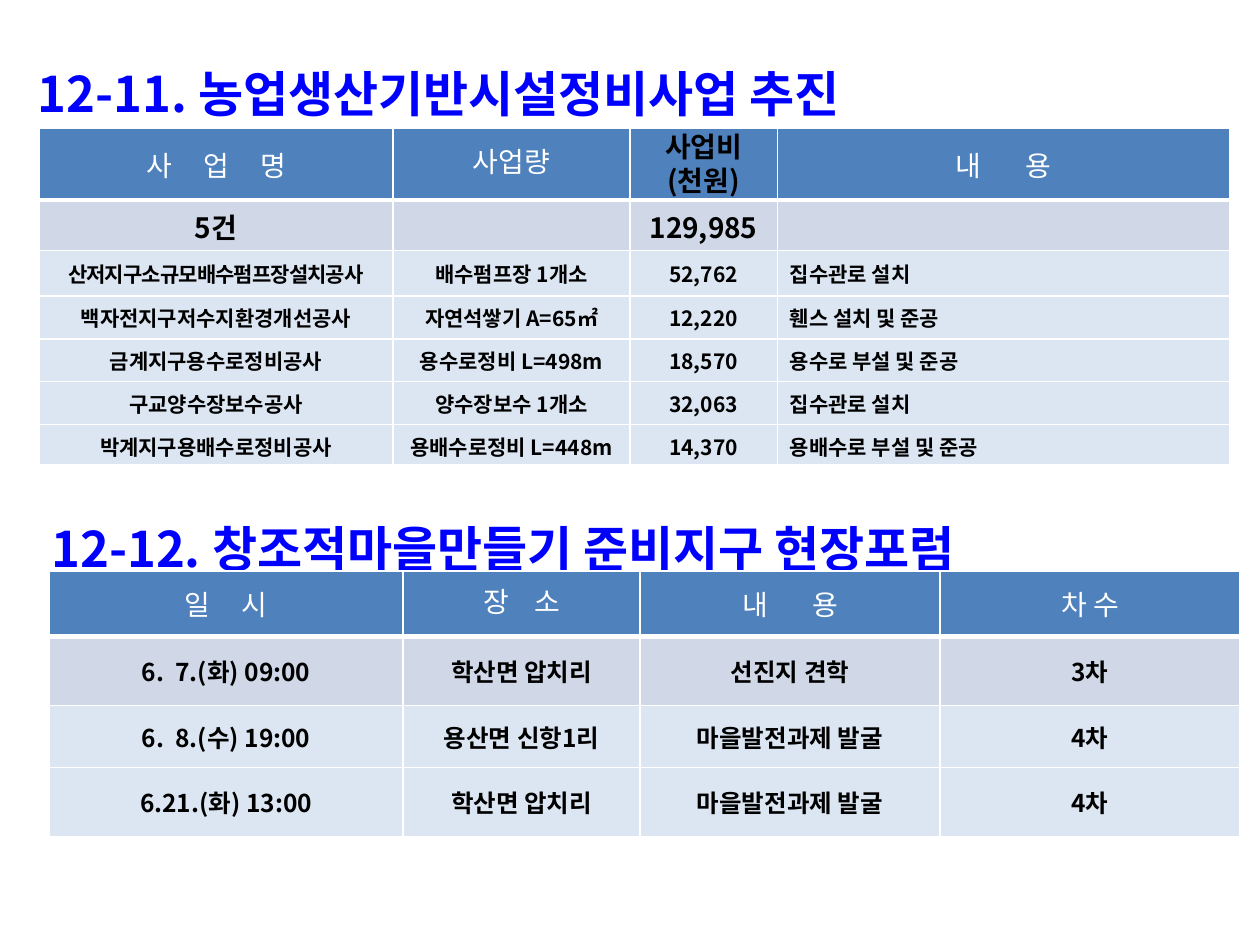
from lxml import etree
from pptx import Presentation
from pptx.dml.color import RGBColor
from pptx.enum.text import MSO_ANCHOR, PP_ALIGN
from pptx.oxml.ns import qn
from pptx.util import Pt

LEFT, CENTER = PP_ALIGN.LEFT, PP_ALIGN.CENTER
MIDDLE = MSO_ANCHOR.MIDDLE
FONT = "Noto Sans CJK KR"
TITLE_BLUE = RGBColor(0x00, 0x00, 0xFF)
HEADER_BLUE = RGBColor(0x4F, 0x81, 0xBD)
FIRST_ROW = RGBColor(0xD0, 0xD8, 0xE8)
BODY_ROW = RGBColor(0xDC, 0xE6, 0xF2)
WHITE = RGBColor(0xFF, 0xFF, 0xFF)
BLACK = RGBColor(0x00, 0x00, 0x00)


def style_span(span, size, color, bold, spacing=0):
    """Set Latin and East Asian font; spacing is letter spacing in points."""
    span.font.name = FONT
    span.font.size = Pt(size)
    span.font.bold = bold
    span.font.color.rgb = color
    props = span.font._element
    props.find(qn("a:latin")).addnext(
        etree.Element(qn("a:ea"), typeface=FONT))
    if spacing:
        props.set("spc", str(round(spacing * 100)))


def add_border(cell, side, width):
    line = etree.SubElement(cell._tc.get_or_add_tcPr(), qn("a:ln" + side),
                            w=str(Pt(width)))
    fill = etree.SubElement(line, qn("a:solidFill"))
    etree.SubElement(fill, qn("a:srgbClr"), val=str(WHITE))


deck = Presentation()
deck.slide_width, deck.slide_height = Pt(720), Pt(540)
page = deck.slides.add_slide(deck.slide_layouts[6])

projects = [
    ["사 업 명", "사업량", "사업비\n(천원)", "내 용"],
    ["5건", "", "129,985", ""],
    ["산저지구소규모배수펌프장설치공사", "배수펌프장 1개소", "52,762", "집수관로 설치"],
    ["백자전지구저수지환경개선공사", "자연석쌓기 A=65㎡", "12,220", "휀스 설치 및 준공"],
    ["금계지구용수로정비공사", "용수로정비 L=498m", "18,570", "용수로 부설 및 준공"],
    ["구교양수장보수공사", "양수장보수 1개소", "32,063", "집수관로 설치"],
    ["박계지구용배수로정비공사", "용배수로정비 L=448m", "14,370", "용배수로 부설 및 준공"],
]
forums = [
    ["일 시", "장 소", "내 용", "차 수"],
    ["6.  7.(화) 09:00", "학산면 압치리", "선진지 견학", "3차"],
    ["6.  8.(수) 19:00", "용산면 신항1리", "마을발전과제 발굴", "4차"],
    ["6.21.(화) 13:00", "학산면 압치리", "마을발전과제 발굴", "4차"],
]
# Letter spacing that stretches the short header words
header_spacing = {"사 업 명": 7.2, "일 시": 7.2, "장 소": 5.4, "내 용": 10.8}

# title, title box, line spacing, table origin, columns, row heights,
# text size of each row, last column alignment, rows
sections = [
    ("12-11. 농업생산기반시설정비사업 추진", (14.4, 25.9, 702.7, 273.6), 1.2,
     (22.3, 73.4), [202.3, 135.4, 84.2, 258.5],
     [41, 28.1, 25.9, 24.5, 24.5, 24.5, 23], [16, 16] + [12] * 5, LEFT, projects),
    ("12-12. 창조적마을만들기 준비지구 현장포럼", (22.3, 275.8, 680.4, 264.2), 1.5,
     (28.1, 326.2), [202.3, 135.4, 171.4, 171.4],
     [37.4, 39.6, 35.3, 39.6], [16] + [14] * 3, CENTER, forums),
]

for (title, title_box, title_spacing, origin, widths, heights,
     sizes, last_align, rows) in sections:
    box = page.shapes.add_textbox(*[Pt(value) for value in title_box])
    box.text_frame.word_wrap = True
    box.text_frame.text = title
    para = box.text_frame.paragraphs[0]
    para.line_spacing = title_spacing
    style_span(para.runs[0], 28, TITLE_BLUE, True)

    frame = page.shapes.add_table(
        len(rows), len(widths), Pt(origin[0]), Pt(origin[1]),
        Pt(sum(widths)), Pt(sum(heights)))
    table = frame.table
    for column, width in zip(table.columns, widths):
        column.width = Pt(width)
    for r, (row, height, size) in enumerate(zip(rows, heights, sizes)):
        table.rows[r].height = Pt(height)
        for c, text in enumerate(row):
            cell = table.cell(r, c)
            for side in "LRTB":
                add_border(cell, side, 3 if r == 0 and side == "B" else 1)
            cell.fill.solid()
            cell.fill.fore_color.rgb = (HEADER_BLUE, FIRST_ROW, BODY_ROW)[min(r, 2)]
            cell.vertical_anchor = MIDDLE
            cell.text_frame.text = text
            is_cost_header = text.startswith("사업비")
            bold = r > 0 or is_cost_header
            color = BLACK if bold else WHITE
            for para in cell.text_frame.paragraphs:
                body_last = r > 1 and c == len(row) - 1
                para.alignment = last_align if body_last else CENTER
                para.space_before = Pt(size * 0.2)
                if r == 0 and c == 1 or is_cost_header:
                    para.line_spacing = 0.7
                if r == 0 and text in header_spacing:
                    para.runs[0].text = text[:-1]
                    para.add_run().text = text[-1]
                    style_span(para.runs[0], size, color, bold, header_spacing[text])
                    style_span(para.runs[1], size, color, bold)
                else:
                    tight = -0.5 if len(text) > 15 and c == 0 and size == 12 else 0
                    for span in para.runs:
                        style_span(span, size, color, bold, tight)

deck.save("out.pptx")
